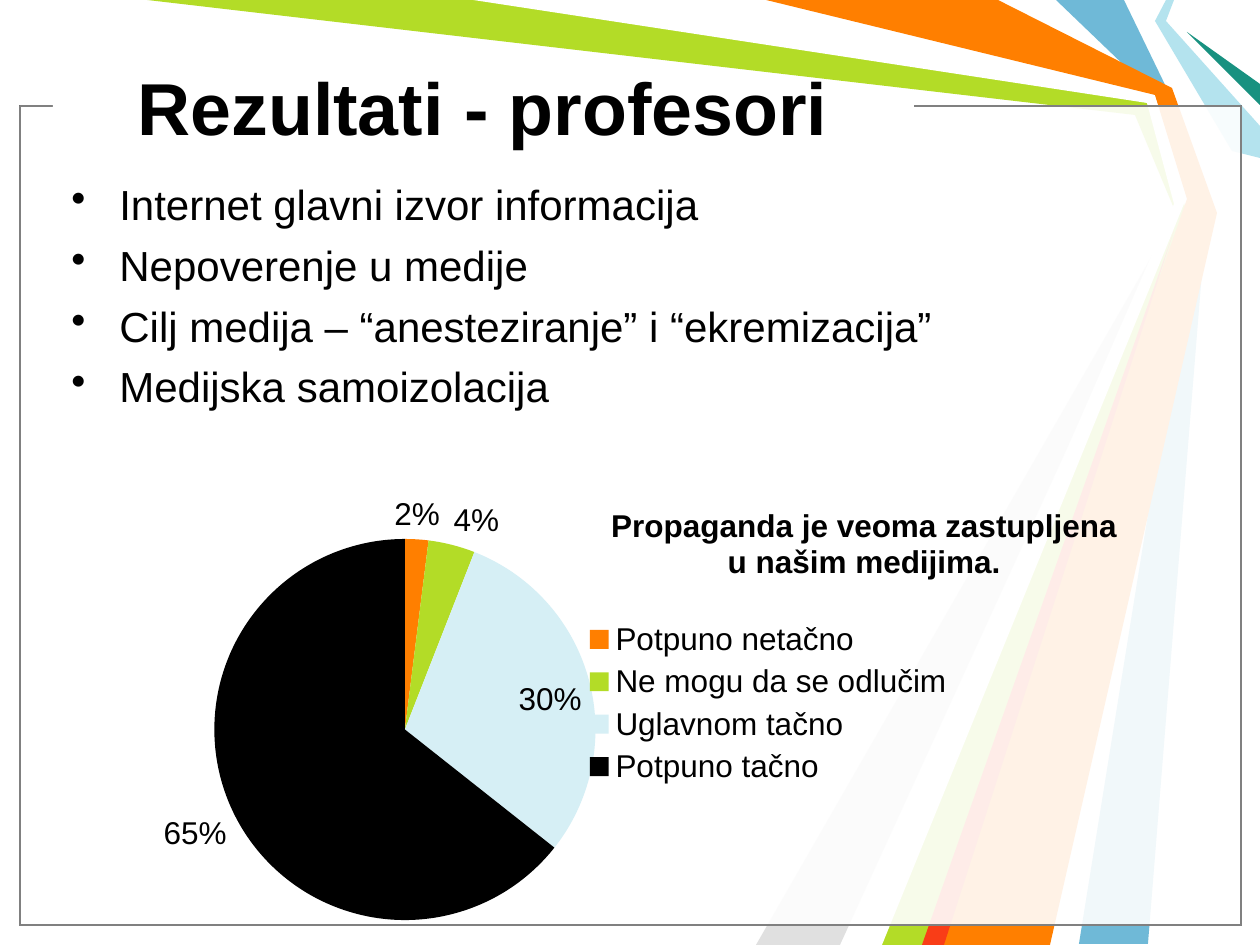
from lxml.etree import SubElement
from pptx import Presentation
from pptx.chart.data import CategoryChartData as ChartData
from pptx.dml.color import RGBColor
from pptx.enum.chart import XL_CHART_TYPE as Kind
from pptx.enum.chart import XL_LABEL_POSITION as Spot
from pptx.enum.chart import XL_LEGEND_POSITION as Side
from pptx.enum.shapes import MSO_SHAPE as Shape
from pptx.enum.text import MSO_ANCHOR as Anchor
from pptx.enum.text import PP_ALIGN as Align
from pptx.oxml.ns import qn
from pptx.util import Pt

PX = 914400 / 126
FONT = "Arial"

# Rays from back to front: fill and corner points
RAYS = [
    ("6FB9D7", [(1124, 0), (1171, 97), (1207, 210), (1148, 944),
                (1079, 944), (1197, 210), (1155, 95), (1056, 0)]),
    ("B3DC27", [(147, 0), (483, 0), (1152, 98), (1187, 213),
                (935, 945), (872, 945), (1178, 218), (1135, 115)]),
    ("E0E0E0", [(840, 945), (1168, 228), (756, 945)]),
    ("FFFFFF", [(473, 0), (1147, 103), (1174, 204), (851, 945),
                (882, 945), (1186, 199), (1155, 95), (756, 0)]),
    ("B4E3EE", [(1166, 0), (1155, 21), (1232, 151), (1260, 158),
                (1260, 126), (1166, 21), (1174, 0)]),
    ("189180", [(1260, 105), (1187, 32), (1260, 84)]),
    ("FF7F00", [(766, 0), (998, 0), (1172, 88), (1217, 213),
                (1050, 945), (924, 945), (1187, 199), (1155, 95)]),
    ("F93D17", [(922, 945), (1174, 231), (944, 945)]),
]
POINTS = [
    "Internet glavni izvor informacija",
    "Nepoverenje u medije",
    "Cilj medija – “anesteziranje” i “ekremizacija”",
    "Medijska samoizolacija",
]
SLICES = [
    ("Potpuno netačno", 2, "FF7F00"),
    ("Ne mogu da se odlučim", 4, "B3DC27"),
    ("Uglavnom tačno", 30, "D6EFF5"),
    ("Potpuno tačno", 65, "000000"),
]


def px(n):
    return round(n * PX)


def rgb(code):
    return RGBColor.from_string(code)


def style(font, size, bold=False, color="000000"):
    font.name, font.size, font.bold = FONT, Pt(size), bold
    font.color.rgb = rgb(color)


def write(frame, lines, size, bold=False, align=Align.LEFT, gap=0, bullet=False):
    for i, line in enumerate(lines):
        para = frame.paragraphs[0] if i == 0 else frame.add_paragraph()
        if bullet:
            props = para._p.get_or_add_pPr()
            props.set("marL", str(px(48)))
            props.set("indent", str(px(-48)))
            SubElement(props, qn("a:buChar"), char="•")
        para.text = line
        para.alignment = align
        para.space_before = Pt(gap if i else 0)
        style(para.font, size, bold)


def paint(shape, fill, line=None, alpha=None):
    shape.shadow.inherit = False
    shape.fill.solid()
    shape.fill.fore_color.rgb = rgb(fill)
    if alpha:
        tint = shape.fill._xPr.find(".//" + qn("a:srgbClr"))
        SubElement(tint, qn("a:alpha"), val=str(alpha * 1000))
    if line:
        shape.line.color.rgb = rgb(line)
        shape.line.width = Pt(0.75)
    else:
        shape.line.fill.background()


def add_rays(shapes):
    for fill, dots in RAYS:
        path = shapes.build_freeform(*dots[0], scale=PX)
        path.add_line_segments(dots[1:], close=True)
        paint(path.convert_to_shape(), fill)


def add_panel(shapes, x, y, w, h):
    """Two translucent sheets, with a strip that breaks the top edge."""
    for line in ("000000", "808080"):
        sheet = shapes.add_shape(Shape.RECTANGLE, px(x), px(y), px(w), px(h))
        paint(sheet, "FFFFFF", line, 69)
    strip = shapes.add_shape(Shape.RECTANGLE, px(x + 33), px(y - 13), px(861), px(21))
    paint(strip, "FFFFFF")


def put_title(shapes, x, y, w, h):
    title = shapes.title
    shapes._spTree.append(title._element)  # bring in front of the panel
    title.left, title.top, title.width, title.height = map(px, (x, y, w, h))
    title.text_frame.vertical_anchor = Anchor.MIDDLE
    write(title.text_frame, ["Rezultati - profesori"], 42, bold=True)


def add_points(shapes, x, y, w, h):
    frame = shapes.add_textbox(px(x), px(y), px(w), px(h)).text_frame
    frame.word_wrap = True
    write(frame, POINTS, 24, gap=6, bullet=True)


def place(part, x, y, w=None, h=None, inner=False):
    """Set a manual layout, in fractions of the chart, on a chart part."""
    layout = part.find(qn("c:layout"))
    if layout is None:
        layout = SubElement(part, qn("c:layout"))
        before = part.find(qn("c:tx"))
        if before is None:
            before = part.find(qn("c:legendPos"))
        if before is not None:
            before.addnext(layout)
        else:
            part.insert(0, layout)
    for old in list(layout):
        layout.remove(old)
    manual = SubElement(layout, qn("c:manualLayout"))
    if inner:
        SubElement(manual, qn("c:layoutTarget"), val="inner")
    for tag in ("xMode", "yMode"):
        SubElement(manual, qn("c:" + tag), val="edge")
    for tag, val in zip("xywh", (x, y, w, h)):
        if val is not None:
            SubElement(manual, qn("c:" + tag), val=str(val))


def add_pie(shapes, x, y, w, h):
    names, vals, fills = zip(*SLICES)
    data = ChartData(number_format='0"%"')
    data.categories = names
    data.add_series("Series 1", vals)
    chart = shapes.add_chart(Kind.PIE, px(x), px(y), px(w), px(h), data).chart
    style(chart.font, 18)

    chart.has_title = True
    heading = ["Propaganda je veoma zastupljena", "u našim medijima."]
    write(chart.chart_title.text_frame, heading, 18, bold=True, align=Align.CENTER)
    chart.chart_title.include_in_layout = False
    chart.has_legend = True
    chart.legend.position = Side.RIGHT
    chart.legend.include_in_layout = False
    style(chart.legend.font, 18)

    plot = chart.plots[0]
    plot.vary_by_categories = True
    plot.has_data_labels = True
    labels = plot.data_labels
    labels.show_value, labels.show_percentage = True, False
    labels.position = Spot.OUTSIDE_END
    style(labels.font, 18)
    points = plot.series[0].points
    for i, fill in enumerate(fills):
        look = points[i].format
        look.fill.solid()
        look.fill.fore_color.rgb = rgb(fill)
        look.line.fill.background()
        label = points[i].data_label
        style(label.font, 18)
        label.position = Spot.INSIDE_END if i == 2 else Spot.OUTSIDE_END

    place(chart.chart_title._element, 0.51, 0.25)
    place(chart.legend._element, 0.49, 0.44, 0.31, 0.3)
    place(chart._chartSpace.chart.plotArea, 0.18, 0.3, 0.32, 0.67, inner=True)


def main():
    deck = Presentation()
    deck.slide_width, deck.slide_height = px(1260), px(945)
    shapes = deck.slides.add_slide(deck.slide_layouts[5]).shapes
    add_rays(shapes)
    add_panel(shapes, 20, 106, 1221, 819)
    put_title(shapes, 125, 28, 868, 157)
    add_points(shapes, 59, 172, 1134, 624)
    add_pie(shapes, 0, 355, 1191, 590)
    deck.save("out.pptx")


if __name__ == "__main__":
    main()
